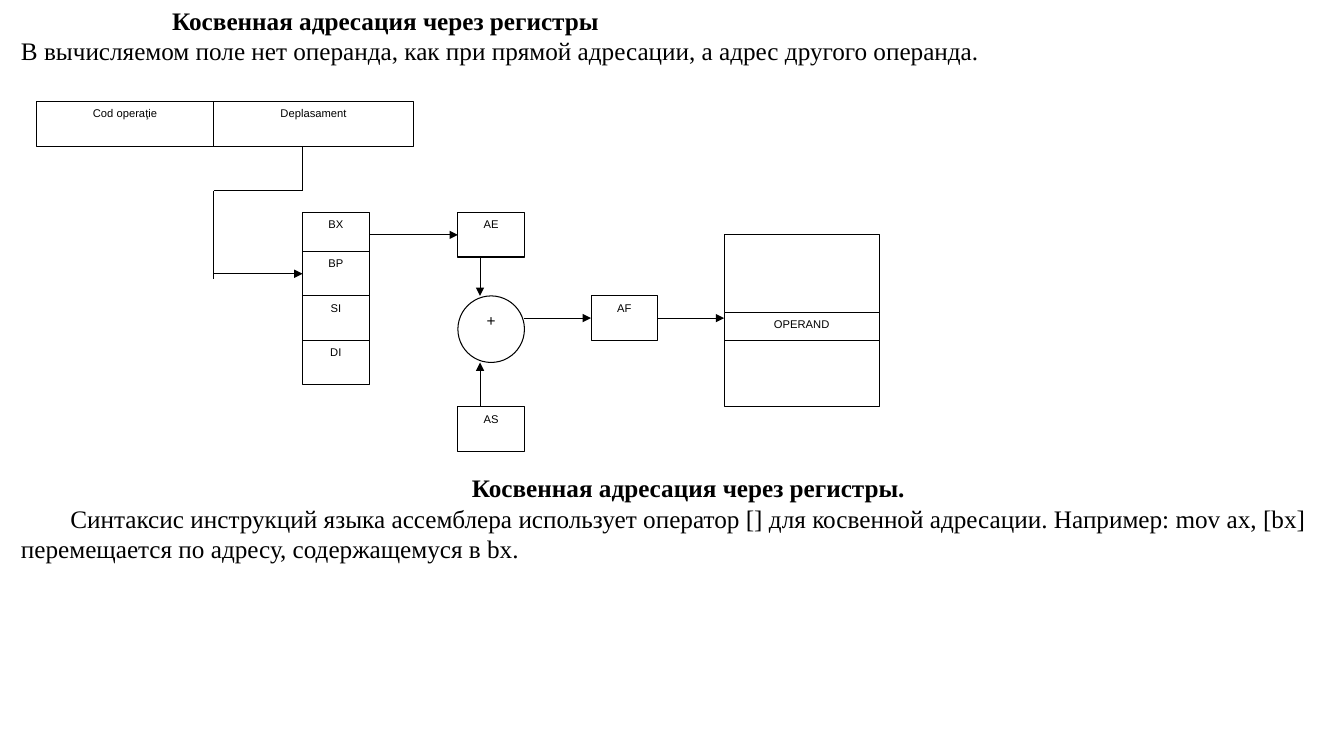
"""Builds the slide on register indirect addressing."""
from dataclasses import dataclass

from lxml.etree import SubElement
from pptx import Presentation
from pptx.dml.color import RGBColor
from pptx.enum.shapes import MSO_CONNECTOR, MSO_SHAPE
from pptx.enum.text import MSO_ANCHOR, MSO_AUTO_SIZE, PP_ALIGN
from pptx.oxml.ns import qn
from pptx.util import Pt


@dataclass(frozen=True)
class Theme:
    """Colours, fonts and sizes in points."""
    ink: RGBColor = RGBColor(0, 0, 0)
    paper: RGBColor = RGBColor(255, 255, 255)
    body_font: str = "Times New Roman"
    label_font: str = "Arial"
    body: float = 18
    label: float = 8
    symbol: float = 11
    stroke: float = 0.75


THEME = Theme()
UNIT, LEFT, TOP = 15.85, 25.9, 72.7
FIRST_LINE = 35.3

BOXES = [
    (0, 0, 8, 2, "Cod operaţie"),
    (8, 0, 9, 2, "Deplasament"),
    (12, 5, 3, 2, "BX"),
    (12, 6.75, 3, 2, "BP"),
    (12, 8.75, 3, 2, "SI"),
    (12, 10.75, 3, 2, "DI"),
    (19, 5, 3, 2, "AE"),
    (19, 13.75, 3, 2, "AS"),
    (25, 8.75, 3, 2, "AF"),
    (31, 9.5, 7, 1.75, "OPERAND"),
    (31, 6, 7, 3.5, ""),
    (31, 10.75, 7, 3, ""),
]
LINES = [
    (12, 2, 12, 4),
    (12, 4, 8, 4),
    (8, 4, 8, 8),
]
ARROWS = [
    (8, 7.75, 12, 7.75),
    (15, 6, 19, 6),
    (20, 7, 20, 8.75),
    (20, 13.75, 20, 11.75),
    (22, 9.75, 25, 9.75),
    (28, 9.75, 31, 9.75),
]


def grid_x(col):
    """Return the horizontal place of a grid column."""
    return Pt(LEFT + UNIT * col)


def grid_y(row):
    """Return the vertical place of a grid row."""
    return Pt(TOP + UNIT * row)


def add_run(p, text, font, size, bold=False):
    """Add one styled run to a paragraph."""
    r = p.add_run()
    r.text = text
    r.font.name = font
    r.font.size = Pt(size)
    r.font.bold = bold
    r.font.color.rgb = THEME.ink


def add_node(s, col, row, cols, rows, text, kind=MSO_SHAPE.RECTANGLE, size=THEME.label):
    """Add an outlined diagram shape with its label at the top."""
    sp = s.shapes.add_shape(kind, grid_x(col), grid_y(row), Pt(UNIT * cols), Pt(UNIT * rows))
    sp.shadow.inherit = False
    sp.fill.solid()
    sp.fill.fore_color.rgb = THEME.paper
    sp.line.color.rgb = THEME.ink
    sp.line.width = Pt(THEME.stroke)
    if text:
        tf = sp.text_frame
        tf.vertical_anchor = MSO_ANCHOR.TOP
        p = tf.paragraphs[0]
        p.alignment = PP_ALIGN.CENTER
        add_run(p, text, THEME.label_font, size)


def add_line(s, col1, row1, col2, row2, arrow=False):
    """Add a straight line between grid points, with an optional arrowhead."""
    sp = s.shapes.add_connector(
        MSO_CONNECTOR.STRAIGHT, grid_x(col1), grid_y(row1), grid_x(col2), grid_y(row2))
    sp.line.color.rgb = THEME.ink
    sp.line.width = Pt(THEME.stroke)
    if arrow:
        SubElement(sp.line._get_or_add_ln(), qn("a:tailEnd"), type="triangle")
    SubElement(sp._element.spPr, qn("a:effectLst"))


def add_text(s, left, top, width, height, paragraphs):
    """Add a text box of (text, alignment, margin, first line, bold) paragraphs."""
    sp = s.shapes.add_textbox(Pt(left), Pt(top), Pt(width), Pt(height))
    tf = sp.text_frame
    tf.word_wrap = True
    tf.auto_size = MSO_AUTO_SIZE.SHAPE_TO_FIT_TEXT
    for i, (text, align, margin, first_line, bold) in enumerate(paragraphs):
        p = tf.add_paragraph() if i else tf.paragraphs[0]
        p.alignment = align
        pPr = p._p.get_or_add_pPr()
        pPr.set("marL", str(Pt(margin)))
        pPr.set("indent", str(Pt(first_line)))
        add_run(p, text, THEME.body_font, THEME.body, bold)


def main():
    """Build and save the slide."""
    prs = Presentation()
    prs.slide_width, prs.slide_height = Pt(960), Pt(540)
    s = prs.slides.add_slide(prs.slide_layouts[6])
    add_text(s, 7.9, 0, 952.1, 51, [
        ("Косвенная адресация через регистры", PP_ALIGN.JUSTIFY, 108, 0, True),
        ("В вычисляемом поле нет операнда, как при прямой адресации, "
         "а адрес другого операнда.", PP_ALIGN.JUSTIFY, 0, 0, False),
    ])
    for box in BOXES:
        add_node(s, *box)
    add_node(s, 19, 8.75, 3, 3, "+", MSO_SHAPE.OVAL, THEME.symbol)
    for line in LINES:
        add_line(s, *line)
    for arrow in ARROWS:
        add_line(s, *arrow, arrow=True)
    add_text(s, 7.9, 334.1, 932.4, 72.7, [
        ("Косвенная адресация через регистры.", PP_ALIGN.CENTER, 0, FIRST_LINE, True),
        ("Синтаксис инструкций языка ассемблера использует оператор [] для "
         "косвенной адресации. Например: mov ax, [bx] перемещается по адресу, "
         "содержащемуся в bx.", PP_ALIGN.JUSTIFY, 0, FIRST_LINE, False),
    ])
    prs.save("out.pptx")


if __name__ == "__main__":
    main()
